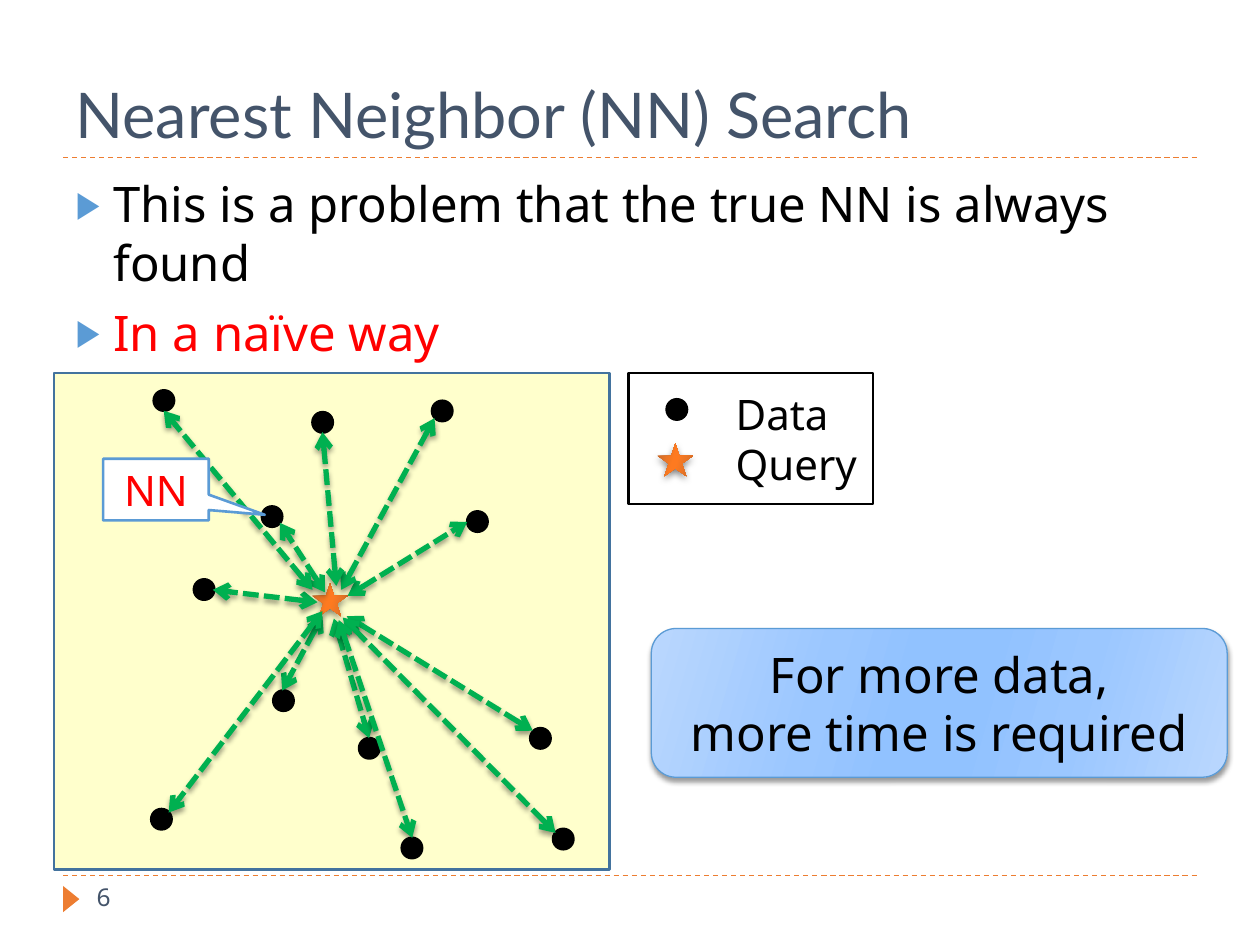
from lxml import etree
from pptx import Presentation
from pptx import util as u
from pptx.dml.color import RGBColor
from pptx.enum import dml, shapes, text
from pptx.oxml import ns

COLORS = {
    "ink": "000000", "paper": "FFFFFF", "heading": "44546A", "accent": "ED7D31",
    "blue": "5B9BD5", "frame": "43739E", "field": "FFFFCC", "red": "FF0000",
    "green": "00B050",
}
ORANGE_GLOW = ("C26628", "EB7626", "FE7A20")
BLUE_GLOW = ("BAD7FE", "9BC7FF", "91C2FF")
KIND = shapes.MSO_SHAPE


def rgb(name):
    return RGBColor.from_string(COLORS[name])


def add(parent, tag, **attributes):
    child = etree.SubElement(parent, ns.qn(tag))
    for key, value in attributes.items():
        child.set(key, str(value))
    return child


class SlideBuilder:
    body_font = "Noto Sans"
    title_font = "Lato"
    dot_size = 0.41
    star_size = (0.71, 0.66)

    def __init__(self, slide):
        self.slide = slide

    def place(self, shape, left, top, width, height):
        shape.left, shape.top = u.Cm(left), u.Cm(top)
        shape.width, shape.height = u.Cm(width), u.Cm(height)

    def style(self, paragraph, size, color, font=None, align=text.PP_ALIGN.LEFT):
        paragraph.alignment = align
        paragraph.font.size = u.Pt(size)
        paragraph.font.name = font or self.body_font
        paragraph.font.color.rgb = rgb(color)

    def fill_text(self, frame, lines, size, color, align=text.PP_ALIGN.LEFT,
                  anchor=text.MSO_ANCHOR.MIDDLE):
        frame.word_wrap = True
        frame.vertical_anchor = anchor
        frame.text = "\n".join(lines)
        for paragraph in frame.paragraphs:
            self.style(paragraph, size, color, align=align)

    def title(self, words, box):
        title = self.slide.shapes.title
        self.place(title, *box)
        title.text_frame.text = words
        title.text_frame.vertical_anchor = text.MSO_ANCHOR.BOTTOM
        self.style(title.text_frame.paragraphs[0], 36, "heading", self.title_font)

    def bullets(self, items, box):
        body = self.slide.placeholders[1]
        self.place(body, *box)
        frame = body.text_frame
        frame.auto_size = text.MSO_AUTO_SIZE.NONE
        frame.text = "\n".join(words for words, _ in items)
        for paragraph, (_, color) in zip(frame.paragraphs, items):
            paragraph.space_before = u.Pt(6)
            properties = paragraph._p.get_or_add_pPr()
            properties.set("marL", str(u.Cm(0.76)))
            properties.set("indent", str(u.Cm(-0.76)))
            add(add(properties, "a:buClr"), "a:srgbClr", val=COLORS["blue"])
            add(properties, "a:buSzPct", val=76000)
            add(properties, "a:buFont", typeface=self.body_font)
            add(properties, "a:buChar", char="▶")
            self.style(paragraph, 28, color)

    def label(self, words, box, size, color):
        label = self.slide.shapes.add_textbox(*map(u.Cm, box))
        self.fill_text(label.text_frame, [words], size, color, anchor=text.MSO_ANCHOR.TOP)

    def shape(self, kind, box, fill=None, line=None, width=1.5):
        shape = self.slide.shapes.add_shape(kind, *map(u.Cm, box))
        shape.shadow.inherit = False
        if fill:
            shape.fill.solid()
            shape.fill.fore_color.rgb = rgb(fill)
        else:
            shape.fill.background()
        if line:
            shape.line.color.rgb = rgb(line)
            shape.line.width = u.Pt(width)
        else:
            shape.line.fill.background()
        return shape

    def glow(self, shape, tones):
        shape.fill.gradient()
        gradient = shape._element.spPr.find(ns.qn("a:gradFill"))
        for child in list(gradient):
            gradient.remove(child)
        stops = add(gradient, "a:gsLst")
        for position, tone in zip((0, 30, 45, 55, 73, 100), tones + tones[::-1]):
            add(add(stops, "a:gs", pos=position * 1000), "a:srgbClr", val=tone)
        add(gradient, "a:lin", ang=16 * 60000, scaled=0)

    def cast_shadow(self, effects, blur=3, opacity=40):
        shadow = add(effects, "a:outerShdw", blurRad=u.Pt(blur), dist=u.Pt(2),
                     dir=90 * 60000, algn="ctr", rotWithShape=0)
        ink = add(shadow, "a:srgbClr", val=COLORS["ink"])
        add(ink, "a:alpha", val=opacity * 1000)

    def effects(self, shape):
        return shape._element.spPr.find(ns.qn("a:effectLst"))

    def dot(self, left, top):
        self.shape(KIND.OVAL, (left, top, self.dot_size, self.dot_size), "ink", "ink")

    def star(self, left, top):
        star = self.shape(KIND.STAR_5_POINT, (left, top, *self.star_size))
        self.glow(star, ORANGE_GLOW)
        self.cast_shadow(self.effects(star), blur=4, opacity=50)

    def connect(self, ends, color, width, dash):
        line = self.slide.shapes.add_connector(
            shapes.MSO_CONNECTOR.STRAIGHT, *map(u.Cm, ends))
        line.line.color.rgb = rgb(color)
        line.line.width = u.Pt(width)
        line.line.dash_style = dash
        add(line._element.spPr, "a:effectLst")
        return line

    def rule(self, height):
        self.connect((1.27, height, 24.13, height), "accent", 0.75, dml.MSO_LINE.DASH)

    def distance(self, ends):
        arrow = self.connect(ends, "green", 3, dml.MSO_LINE.SQUARE_DOT)
        outline = arrow._element.spPr.find(ns.qn("a:ln"))
        for tip in ("a:headEnd", "a:tailEnd"):
            add(outline, tip, type="arrow")
        self.cast_shadow(self.effects(arrow))


NEIGHBORS = [
    ((10.69, 14.68), (6.99, 12.42, 10.74, 14.73)),
    ((7.24, 14.88), (6.73, 12.47, 7.44, 14.88)),
    ((5.28, 10.21), (6.55, 11.94, 5.64, 10.54)),
    ((3.91, 11.68), (6.4, 12.14, 4.29, 11.89)),
    ((5.51, 13.92), (6.5, 12.42, 5.69, 13.92)),
    ((9.42, 10.31), (7.01, 12.01, 9.42, 10.52)),
    ((11.15, 16.71), (6.91, 12.45, 11.2, 16.79)),
    ((8.1, 16.89), (6.83, 12.5, 8.31, 16.89)),
    ((3.05, 16.31), (6.5, 12.32, 3.4, 16.38)),
    ((8.71, 8.08), (6.88, 11.89, 8.76, 8.43)),
    ((6.3, 8.31), (6.78, 11.81, 6.5, 8.71)),
    ((3.1, 7.87), (6.3, 11.89, 3.3, 8.28)),
]


def main():
    deck = Presentation()
    deck.slide_width, deck.slide_height = u.Cm(25.4), u.Cm(19.05)
    page = SlideBuilder(deck.slides.add_slide(deck.slide_layouts[1]))

    page.rule(17.65)
    page.rule(3.18)
    page.shape(KIND.ISOSCELES_TRIANGLE, (1.17, 17.96, 0.53, 0.33), "accent").rotation = 90
    page.title("Nearest Neighbor (NN) Search", (1.27, 0.43, 22.86, 2.74))
    page.bullets([("This is a problem that the true NN is always found", "ink"),
                  ("In a naïve way", "red")], (1.27, 3.38, 22.86, 13.72))
    page.label("6", (1.7, 17.65, 5.51, 1.02), 14, "heading")

    page.shape(KIND.RECTANGLE, (1.09, 7.52, 11.2, 10.01), "field", "frame")
    for position, _ in NEIGHBORS:
        page.dot(*position)
    page.star(6.3, 11.76)
    for _, ends in NEIGHBORS:
        page.distance(ends)

    nearest = page.shape(KIND.RECTANGULAR_CALLOUT, (2.08, 9.25, 2.13, 1.24), "paper", "blue")
    nearest.adjustments[0], nearest.adjustments[1] = 1.03, 0.41
    page.fill_text(nearest.text_frame, ["NN"], 24, "red", text.PP_ALIGN.CENTER)

    legend = page.shape(KIND.RECTANGLE, (12.67, 7.52, 4.93, 2.64), line="ink")
    page.fill_text(legend.text_frame, ["Data", "Query"], 24, "ink")
    legend.text_frame.margin_left = u.Cm(2.16)
    legend.text_frame.margin_right = 0
    page.dot(13.44, 8.05)
    page.star(13.26, 8.94)

    remark = page.shape(KIND.ROUNDED_RECTANGLE, (13.13, 12.67, 11.61, 3), line="blue", width=0.75)
    page.glow(remark, BLUE_GLOW)
    page.cast_shadow(page.effects(remark))
    page.fill_text(remark.text_frame, ["For more data,", "more time is required"], 28, "ink",
                   text.PP_ALIGN.CENTER)

    deck.save("out.pptx")


if __name__ == "__main__":
    main()
